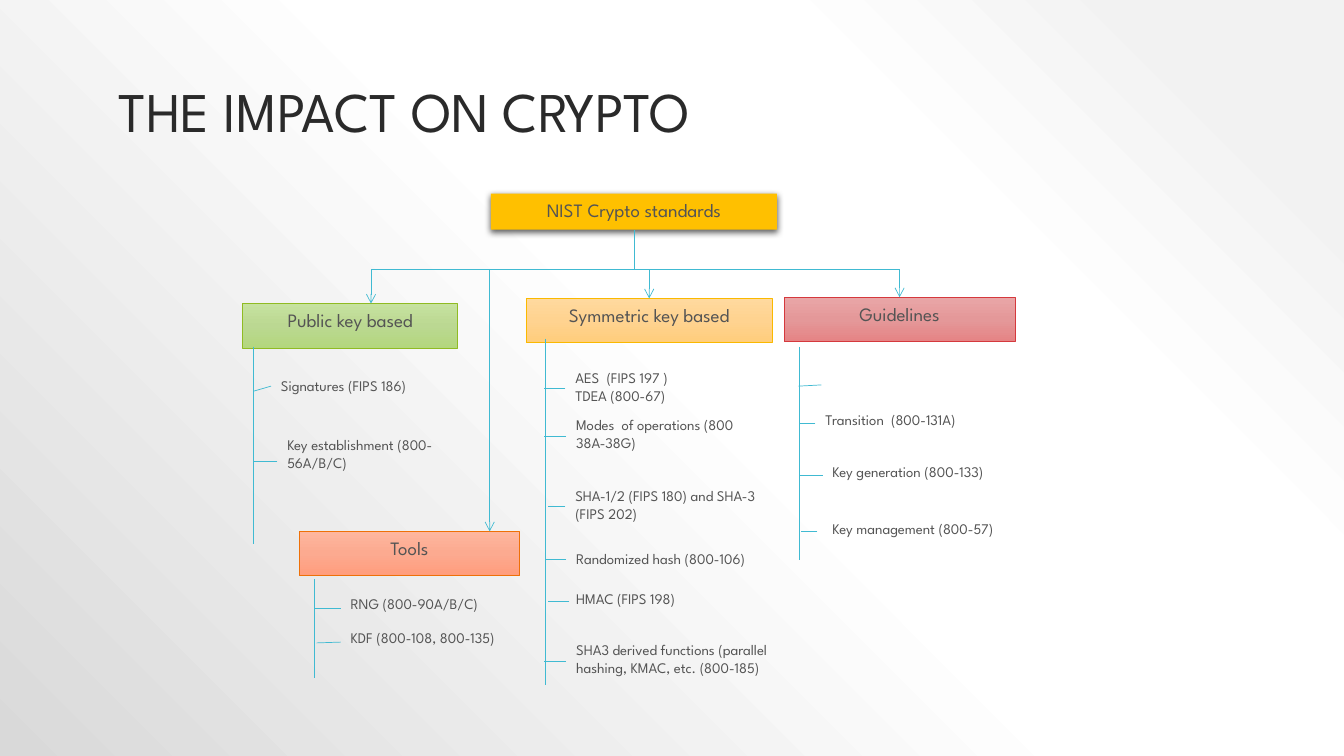
from pptx import Presentation
from pptx.dml.color import RGBColor
from pptx.enum.shapes import MSO_CONNECTOR, MSO_SHAPE
from pptx.enum.text import MSO_ANCHOR, PP_ALIGN
from pptx.oxml import parse_xml
from pptx.oxml.ns import nsdecls, qn
from pptx.util import Cm, Pt

FONT = "League Spartan"
INK = RGBColor(0x2A, 0x2A, 0x2A)
GREY = RGBColor(0x54, 0x54, 0x54)
TEAL = RGBColor(0x40, 0xBA, 0xD2)
GOLD = RGBColor(0xFF, 0xC0, 0x00)
SILVER = RGBColor(0xF2, 0xF2, 0xF2)
WHITE = RGBColor(0xFF, 0xFF, 0xFF)
ASH = RGBColor(0xD9, 0xD9, 0xD9)

GREEN = [RGBColor(0xC6, 0xE2, 0x9F), RGBColor(0xBB, 0xD8, 0x92),
         RGBColor(0xB3, 0xD7, 0x7D), RGBColor(0x90, 0xBB, 0x23)]
CORAL = [RGBColor(0xFE, 0xB6, 0x9E), RGBColor(0xFC, 0xAA, 0x90),
         RGBColor(0xFF, 0x9C, 0x7C), RGBColor(0xEE, 0x70, 0x08)]
AMBER = [RGBColor(0xFF, 0xD9, 0x9E), RGBColor(0xFF, 0xD3, 0x90),
         RGBColor(0xFF, 0xCD, 0x7C), RGBColor(0xFA, 0xB9, 0x00)]
ROSE = [RGBColor(0xE9, 0xA6, 0xA7), RGBColor(0xE4, 0x98, 0x99),
        RGBColor(0xE5, 0x84, 0x85), RGBColor(0xD5, 0x39, 0x3D)]

BUS = 6.78

# Each item: text, (left, top, width, height), tick (x1, y1, x2, y2)
PUBLIC = [
    ("Signatures (FIPS 186)", (0.71, 1.72, 4.6, 0.71), (0.71, 2.08, 0.26, 2.21)),
    ("Key establishment (800-56A/B/C)", (0.87, 3.22, 4.6, 1.52), (0.87, 3.98, 0.26, 3.98)),
]
TOOLS = [
    ("RNG (800-90A/B/C)", (1.05, 1.47, 4.52, 0.94), (1.05, 1.95, 0.38, 1.95)),
    ("KDF (800-108, 800-135)", (1.05, 2.33, 5.16, 0.94), (1.05, 2.79, 0.44, 2.81)),
]
CIPHERS = [
    ("AES  (FIPS 197 )\nTDEA (800-67)", (0.99, 1.65, 4.55, 1.27), (0.99, 2.26, 0.46, 2.26)),
    ("Modes  of operations (800 38A-38G)", (1.01, 2.84, 4.52, 1.27), (1.01, 3.48, 0.46, 3.48)),
    ("SHA-1/2 (FIPS 180) and SHA-3 (FIPS 202)", (0.99, 4.62, 5.33, 1.27), (0.99, 5.23, 0.56, 5.23)),
    ("Randomized hash (800-106)", (1.01, 6.2, 5.46, 0.76), (1.01, 6.58, 0.48, 6.58)),
    ("HMAC (FIPS 198)", (1.01, 7.21, 4.52, 0.94), (1.09, 7.64, 0.56, 7.64)),
    ("SHA3 derived functions (parallel hashing, KMAC, etc. (800-185)",
     (1.01, 8.51, 6.32, 1.27), (1.01, 9.14, 0.46, 9.14)),
]
GUIDES = [
    ("", None, (0.36, 2.24, 0.94, 2.21)),
    ("Transition  (800-131A)", (0.79, 2.75, 4.8, 1.52), (0.79, 3.18, 0.41, 3.18)),
    ("Key generation (800-133)", (0.97, 4.04, 5.51, 0.94), (0.97, 4.5, 0.41, 4.5)),
    ("Key management (800-57)", (0.97, 5.49, 5.51, 1.52), (0.84, 5.9, 0.43, 5.9)),
]


def blend(root, stops, shade):
    node = next(root.iter(qn("a:gradFill")))
    node.clear()
    marks = "".join(f'<a:gs pos="{pos * 1000}"><a:srgbClr val="{tone}"/></a:gs>'
                    for pos, tone in stops)
    node.append(parse_xml(f'<a:gsLst {nsdecls("a")}>{marks}</a:gsLst>'))
    node.append(parse_xml(shade))


def style(frame, size, color, align=PP_ALIGN.LEFT):
    frame.word_wrap = True
    for para in frame.paragraphs:
        para.alignment = align
        for run in para.runs:
            run.font.name = FONT
            run.font.size = Pt(size)
            run.font.color.rgb = color


def label(slide, text, box, size=10.5, color=GREY):
    frame = slide.shapes.add_textbox(*map(Cm, box)).text_frame
    frame.text = text
    style(frame, size, color)
    return frame


def wire(slide, x1, y1, x2, y2, arrow=False):
    line = slide.shapes.add_connector(MSO_CONNECTOR.STRAIGHT, Cm(x1), Cm(y1), Cm(x2), Cm(y2))
    line.line.color.rgb = TEAL
    line.line.width = Pt(0.5)
    if arrow:
        line.line._get_or_add_ln().append(
            parse_xml(f'<a:tailEnd {nsdecls("a")} type="arrow"/>'))
    line._element.spPr.append(parse_xml(f'<a:effectLst {nsdecls("a")}/>'))
    return line


def node(slide, text, box):
    shape = slide.shapes.add_shape(MSO_SHAPE.RECTANGLE, *map(Cm, box))
    shape.shadow.inherit = False
    shape.text_frame.text = text
    shape.text_frame.vertical_anchor = MSO_ANCHOR.TOP
    style(shape.text_frame, 13.5, GREY, PP_ALIGN.CENTER)
    return shape


def root(slide, box):
    left, top, width, height = box
    shape = node(slide, "NIST Crypto standards", box)
    shape.fill.solid()
    shape.fill.fore_color.rgb = GOLD
    shape.line.fill.background()
    shape._element.spPr.find(qn("a:effectLst")).append(parse_xml(
        f'<a:outerShdw {nsdecls("a")} blurRad="57150" dist="19050" dir="5400000" '
        'algn="ctr" rotWithShape="0"><a:srgbClr val="000000"><a:alpha val="63000"/>'
        '</a:srgbClr></a:outerShdw>'))
    mid = left + width / 2
    wire(slide, mid, top + height, mid, BUS).begin_connect(shape, 2)
    wire(slide, 9.35, BUS, 22.67, BUS)


def branch(slide, text, box, tones, stem, drop, items):
    left, top, width, height = box
    shape = node(slide, text, box)
    shape.fill.gradient()
    blend(shape._element.spPr, zip((0, 50, 100), tones),
          f'<a:lin {nsdecls("a")} ang="5400000" scaled="0"/>')
    shape.line.color.rgb = tones[-1]
    shape.line.width = Pt(0.5)

    mid = left + width / 2
    spot = mid if drop is None else drop
    arrow = wire(slide, spot, BUS, spot, top, True)
    if drop is None:
        arrow.end_connect(shape, 0)

    side, start, end = stem
    wire(slide, left + side, top + start, left + side, top + end)
    for words, (x1, y1, x2, y2) in ((item[0], item[2]) for item in items):
        wire(slide, left + x1, top + y1, left + x2, top + y2)
    for words, place, tick in items:
        if words:
            x, y, w, h = place
            label(slide, words, (left + x, top + y, w, h))


def title(slide, text, box):
    frame = label(slide, text, box, 40, INK)
    frame.vertical_anchor = MSO_ANCHOR.BOTTOM
    frame.paragraphs[0].line_spacing = 0.9


def backdrop(slide):
    slide.background.fill.gradient()
    blend(slide._element, [(10, SILVER), (28, WHITE), (48, WHITE), (100, ASH)],
          f'<a:path {nsdecls("a")} path="circle">'
          '<a:fillToRect l="100000" t="0" r="0" b="100000"/></a:path>')


def main():
    deck = Presentation()
    deck.slide_width, deck.slide_height = Cm(33.87), Cm(19.05)
    slide = deck.slides.add_slide(deck.slide_layouts[6])
    backdrop(slide)
    title(slide, "THE IMPACT ON CRYPTO", (2.74, 1.7, 27.15, 2.08))
    root(slide, (12.37, 4.88, 7.21, 0.91))
    branch(slide, "Public key based", (6.12, 7.65, 5.41, 1.12), GREEN,
           (0.26, 1.09, 6.07), 9.35, PUBLIC)
    branch(slide, "Tools", (7.54, 13.39, 5.56, 1.12), CORAL,
           (0.38, 1.21, 3.7), 12.34, TOOLS)
    branch(slide, "Symmetric key based", (13.26, 7.52, 6.2, 1.12), AMBER,
           (0.48, 1.01, 9.75), None, CIPHERS)
    branch(slide, "Guidelines", (19.76, 7.49, 5.82, 1.12), ROSE,
           (0.38, 1.25, 6.61), None, GUIDES)
    deck.save("out.pptx")


if __name__ == "__main__":
    main()
